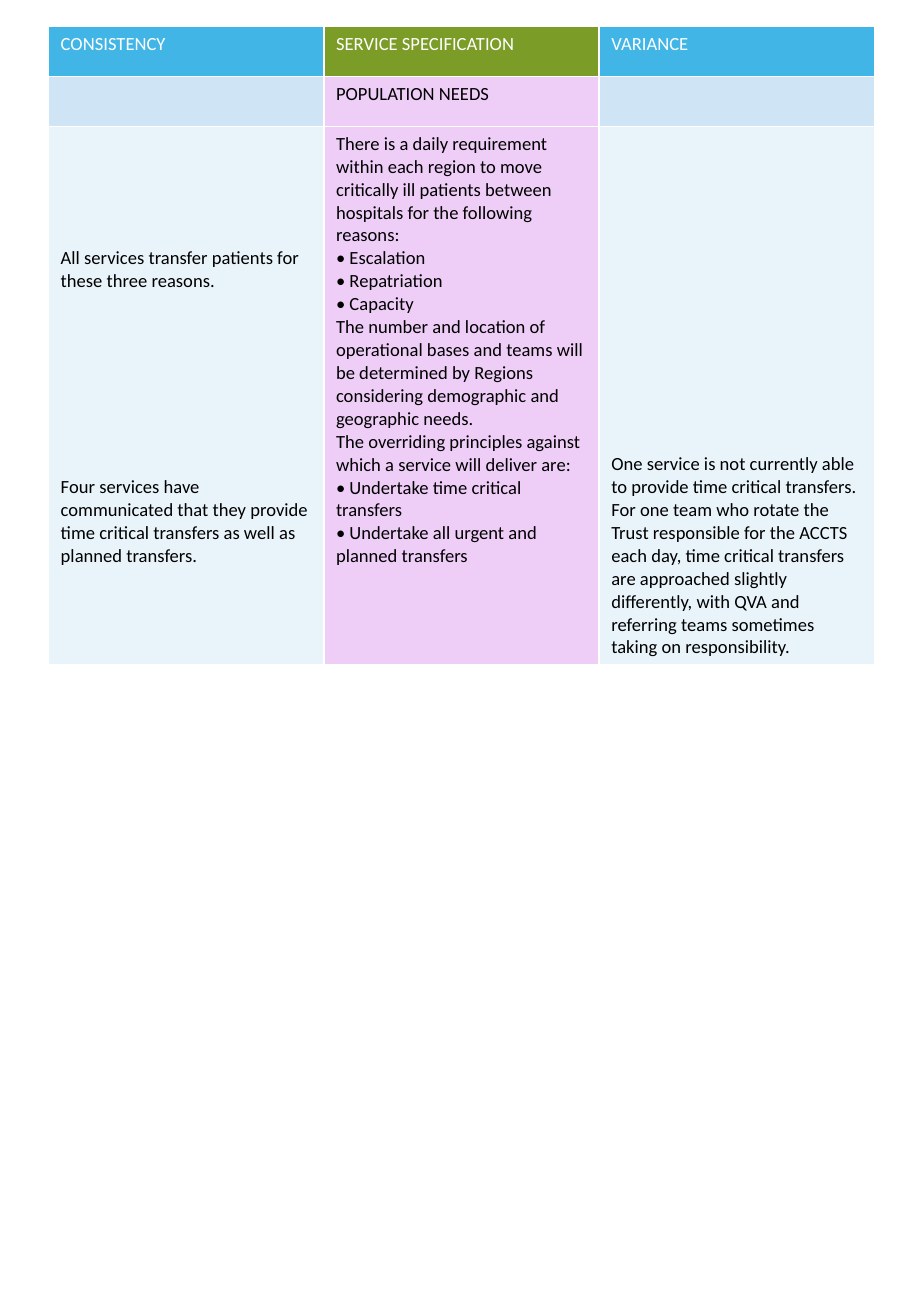
"""Build a page comparing transfer services with their specification."""
import pptx
import pptx.dml.color
import pptx.util

Inches = pptx.util.Inches
Pt = pptx.util.Pt

PAGE_SIZE = (7.5, 10.83)
TABLE_BOX = (0.4, 0.22, 6.8, 5.25)
ROW_HEIGHTS = (0.41, 0.41, 4.43)
FONT_NAME, FONT_SIZE = "Calibri", 11
LINE_HEIGHT = 13.56
CELL_MARGIN = 0.05

ROW_FILLS = (
    ("41B6E6", "7B9C27", "41B6E6"),
    ("CFE5F5", "EECDF7", "CFE5F5"),
    ("E9F3FA", "EECDF7", "E9F3FA"),
)
TEXT_COLORS = ("FFFFFF", "000000", "000000")

# Each paragraph is (lines of space above, text).
CONSISTENCY = [
    (5, "All services transfer patients for these three reasons."),
    (8, "Four services have communicated that they provide time critical "
        "transfers as well as planned transfers."),
]
SPECIFICATION = [
    (0, "There is a daily requirement within each region to move critically ill "
        "patients between hospitals for the following reasons:"),
    (0, "• Escalation"),
    (0, "• Repatriation"),
    (0, "• Capacity"),
    (0, "The number and location of operational bases and teams will be determined "
        "by Regions considering demographic and geographic needs."),
    (0, "The overriding principles against which a service will deliver are:"),
    (0, "• Undertake time critical transfers"),
    (0, "• Undertake all urgent and planned transfers"),
]
VARIANCE = [
    (14, "One service is not currently able to provide time critical transfers. "
         "For one team who rotate the Trust responsible for the ACCTS each day, "
         "time critical transfers are approached slightly differently, with QVA "
         "and referring teams sometimes taking on responsibility."),
]
ROWS = (
    ([(0, "CONSISTENCY")], [(0, "SERVICE SPECIFICATION")], [(0, "VARIANCE")]),
    ([], [(0, "POPULATION NEEDS")], []),
    (CONSISTENCY, SPECIFICATION, VARIANCE),
)


def color(value):
    return pptx.dml.color.RGBColor.from_string(value)


def fill_cell(cell, paragraphs, fill, text_color):
    cell.fill.solid()
    cell.fill.fore_color.rgb = color(fill)
    first_gap = paragraphs[0][0] if paragraphs else 0
    cell.margin_top = Inches(CELL_MARGIN) + Pt(first_gap * LINE_HEIGHT)
    cell.margin_bottom = Inches(CELL_MARGIN)
    frame = cell.text_frame
    for index, (gap, text) in enumerate(paragraphs):
        paragraph = frame.add_paragraph() if index else frame.paragraphs[0]
        paragraph.text = text
        if index and gap:
            paragraph.space_before = Pt(gap * LINE_HEIGHT)
    for paragraph in frame.paragraphs:
        font = paragraph.font
        font.name, font.size, font.bold = FONT_NAME, Pt(FONT_SIZE), False
        font.color.rgb = color(text_color)


def main():
    presentation = pptx.Presentation()
    presentation.slide_width, presentation.slide_height = map(Inches, PAGE_SIZE)
    slide = presentation.slides.add_slide(presentation.slide_layouts[6])
    table = slide.shapes.add_table(
        len(ROWS), len(ROWS[0]), *map(Inches, TABLE_BOX)).table
    for row_index, row in enumerate(ROWS):
        table.rows[row_index].height = Inches(ROW_HEIGHTS[row_index])
        for column_index, paragraphs in enumerate(row):
            fill_cell(table.cell(row_index, column_index), paragraphs,
                      ROW_FILLS[row_index][column_index], TEXT_COLORS[row_index])
    presentation.save("out.pptx")


if __name__ == "__main__":
    main()
